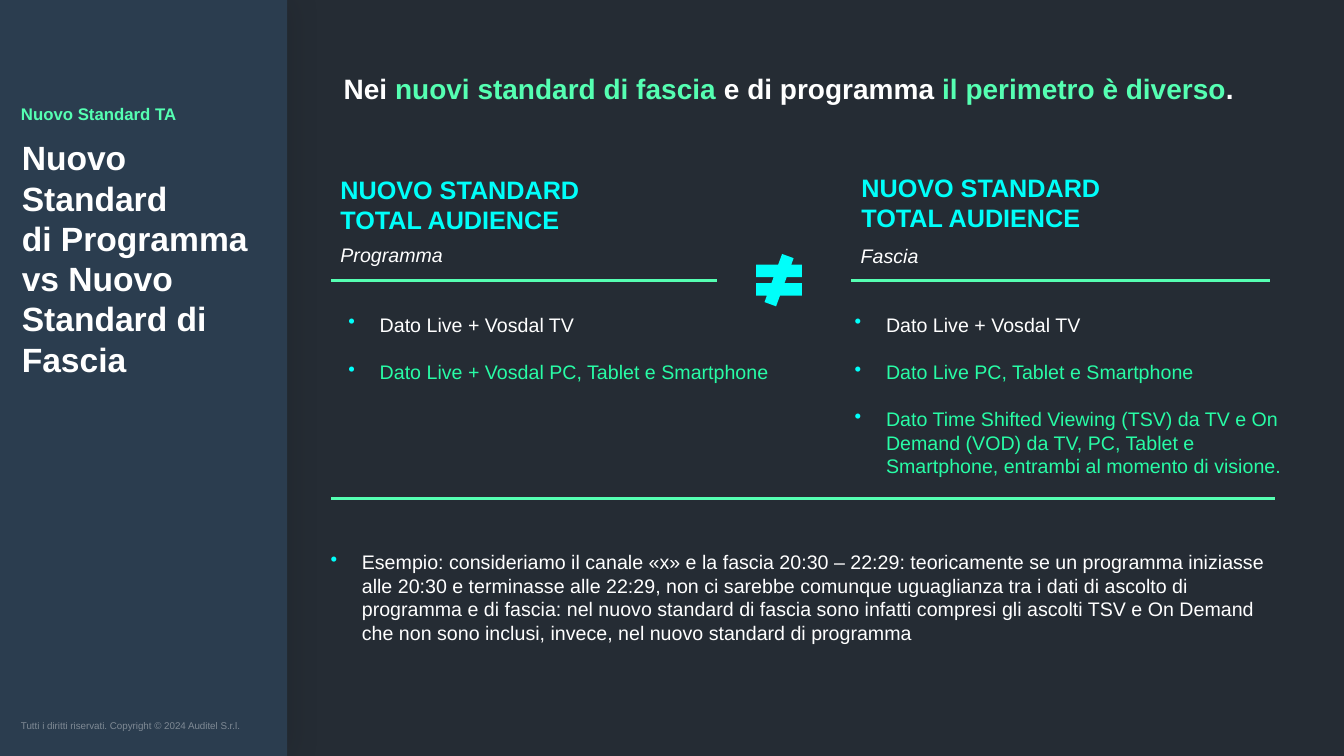
from dataclasses import dataclass

from lxml import etree
from pptx import Presentation
from pptx.dml.color import RGBColor
from pptx.enum.shapes import MSO_CONNECTOR, MSO_SHAPE
from pptx.enum.text import MSO_ANCHOR
from pptx.oxml.ns import qn
from pptx.util import Cm, Pt

STRAIGHT = MSO_CONNECTOR.STRAIGHT
RECTANGLE = MSO_SHAPE.RECTANGLE
NOT_EQUAL = MSO_SHAPE.MATH_NOT_EQUAL
TOP, MIDDLE = MSO_ANCHOR.TOP, MSO_ANCHOR.MIDDLE


@dataclass(frozen=True)
class Theme:
    font: str = "Arial"
    background: str = "252C34"
    panel: str = "2B3D4F"
    shadow: str = "000000"
    white: str = "FFFFFF"
    mint: str = "55FFB2"
    green: str = "28FCA6"
    cyan: str = "00FFFA"
    copyright_size: float = 7
    kicker_size: float = 12
    body_size: float = 14
    heading_size: float = 18
    headline_size: float = 20
    title_size: float = 24
    item_gap: float = 17


THEME = Theme()

COPYRIGHT = "Tutti i diritti riservati. Copyright © 2024 Auditel S.r.l."
KICKER = "Nuovo Standard TA"
TITLE = "Nuovo Standard\vdi Programma vs Nuovo Standard di Fascia"
HEADLINE = [
    ("Nei ", THEME.white),
    ("nuovi standard di fascia", THEME.mint),
    (" e di programma ", THEME.white),
    ("il perimetro è diverso", THEME.mint),
    (".", THEME.white),
]
HEADING = ["NUOVO STANDARD", "TOTAL AUDIENCE"]
COLUMNS = [
    {
        "subtitle": "Programma",
        "items": ["Dato Live + Vosdal TV", "Dato Live + Vosdal PC, Tablet e Smartphone"],
        "heading_at": (8.33, 4.27),
        "subtitle_at": (8.33, 5.99),
        "list_at": (8.53, 7.75, 11.28, 2.06),
        "rule": (8.33, 18.06),
    },
    {
        "subtitle": "Fascia",
        "items": [
            "Dato Live + Vosdal TV",
            "Dato Live PC, Tablet e Smartphone",
            "Dato Time Shifted Viewing (TSV) da TV e On Demand (VOD) da TV, PC, "
            "Tablet e Smartphone, entrambi al momento di visione.",
        ],
        "heading_at": (21.46, 4.22),
        "subtitle_at": (21.44, 6.02),
        "list_at": (21.29, 7.75, 11.28, 4.45),
        "rule": (21.44, 32),
    },
]
EXAMPLE = (
    "Esempio: consideriamo il canale «x» e la fascia 20:30 – 22:29: teoricamente se un "
    "programma iniziasse alle 20:30 e terminasse alle 22:29, non ci sarebbe comunque "
    "uguaglianza tra i dati di ascolto di programma e di fascia: nel nuovo standard di "
    "fascia sono infatti compresi gli ascolti TSV e On Demand che non sono inclusi, "
    "invece, nel nuovo standard di programma"
)

PAGE_WIDTH, PAGE_HEIGHT, PANEL_WIDTH = 33.87, 19.05, 7.24
HEADING_SIZE = (12.4, 1.8)
SUBTITLE_SIZE = (9.75, 0.86)
COLUMN_RULE_Y, BOTTOM_RULE_Y = 7.06, 12.57
INDENT = 0.79


def rgb(value):
    return RGBColor.from_string(value)


def add_shape(page, kind, place, color):
    shape = page.shapes.add_shape(kind, *map(Cm, place))
    shape.shadow.inherit = False
    shape.fill.solid()
    shape.fill.fore_color.rgb = rgb(color)
    shape.line.fill.background()
    return shape


def add_panel(page):
    panel = add_shape(page, RECTANGLE, (0, 0, PANEL_WIDTH, PAGE_HEIGHT), THEME.panel)
    effects = panel._element.spPr.find(qn("a:effectLst"))
    shadow = etree.SubElement(
        effects, qn("a:outerShdw"), blurRad=str(Pt(21.2)), dist=str(Pt(3)), dir="0"
    )
    color = etree.SubElement(shadow, qn("a:srgbClr"), val=THEME.shadow)
    etree.SubElement(color, qn("a:alpha"), val="10000")


def add_rule(page, left, right, y):
    rule = page.shapes.add_connector(STRAIGHT, Cm(right), Cm(y), Cm(left), Cm(y))
    rule.line.color.rgb = rgb(THEME.mint)
    rule.line.width = Pt(0)
    etree.SubElement(rule._element.spPr, qn("a:effectLst"))


def add_bullet(para):
    properties = para._p.get_or_add_pPr()
    properties.set("marL", str(Cm(INDENT)))
    properties.set("indent", str(-Cm(INDENT)))
    color = etree.SubElement(properties, qn("a:buClr"))
    etree.SubElement(color, qn("a:srgbClr"), val=THEME.cyan)
    etree.SubElement(properties, qn("a:buChar"), char="•")


def add_text(page, place, lines, size, bold=False, italic=False, bullets=False, anchor=TOP):
    box = page.shapes.add_textbox(*map(Cm, place))
    frame = box.text_frame
    frame.word_wrap = True
    frame.vertical_anchor = anchor
    for index, (text, color) in enumerate(lines):
        para = frame.add_paragraph() if index else frame.paragraphs[0]
        para.text = text
        if bullets:
            add_bullet(para)
            if index:
                para.space_before = Pt(THEME.item_gap)
        para.font.name = THEME.font
        para.font.size = Pt(size)
        para.font.bold = bold
        para.font.italic = italic
        para.font.color.rgb = rgb(color)
    return frame


def add_sidebar(page):
    add_panel(page)
    notice = add_text(
        page, (0.28, 18.01, 6.83, 0.56), [(COPYRIGHT, THEME.white)], THEME.copyright_size
    )
    color = notice.paragraphs[0]._p.find(".//" + qn("a:srgbClr"))
    etree.SubElement(color, qn("a:alpha"), val="40000")
    kicker = add_text(
        page, (0.28, 2.54, 6.07, 1.12), [(KICKER, THEME.mint)], THEME.kicker_size, bold=True
    )
    kicker.paragraphs[0].line_spacing = 0.9
    add_text(page, (0.3, 3.33, 6.6, 3.68), [(TITLE, THEME.white)], THEME.title_size, bold=True)


def add_headline(page):
    place = (8.41, 1.68, 24.18, 1.12)
    frame = add_text(page, place, [("", THEME.white)], THEME.headline_size, bold=True)
    for text, color in HEADLINE:
        span = frame.paragraphs[0].add_run()
        span.text = text
        span.font.color.rgb = rgb(color)


def add_column(page, column):
    heading = [(line, THEME.cyan) for line in HEADING]
    add_text(page, column["heading_at"] + HEADING_SIZE, heading, THEME.heading_size, bold=True)
    subtitle = [(column["subtitle"], THEME.white)]
    add_text(page, column["subtitle_at"] + SUBTITLE_SIZE, subtitle, THEME.body_size, italic=True)
    add_rule(page, *column["rule"], COLUMN_RULE_Y)
    first, *others = column["items"]
    items = [(first, THEME.white)] + [(item, THEME.green) for item in others]
    add_text(page, column["list_at"], items, THEME.body_size, bullets=True)


def add_example(page):
    add_rule(page, 8.33, 32.13, BOTTOM_RULE_Y)
    frame = add_text(
        page, (8.33, 12.8, 24.23, 4.5), [(EXAMPLE, THEME.white)], THEME.body_size,
        bullets=True, anchor=MIDDLE,
    )
    frame.margin_left = frame.margin_right = frame.margin_top = frame.margin_bottom = 0


def main():
    deck = Presentation()
    deck.slide_width, deck.slide_height = Cm(PAGE_WIDTH), Cm(PAGE_HEIGHT)
    page = deck.slides.add_slide(deck.slide_layouts[6])
    page.background.fill.solid()
    page.background.fill.fore_color.rgb = rgb(THEME.background)
    add_sidebar(page)
    add_headline(page)
    for column in COLUMNS:
        add_column(page, column)
    add_example(page)
    add_shape(page, NOT_EQUAL, (18.85, 6.4, 1.57, 1.32), THEME.cyan)
    deck.save("out.pptx")


if __name__ == "__main__":
    main()
